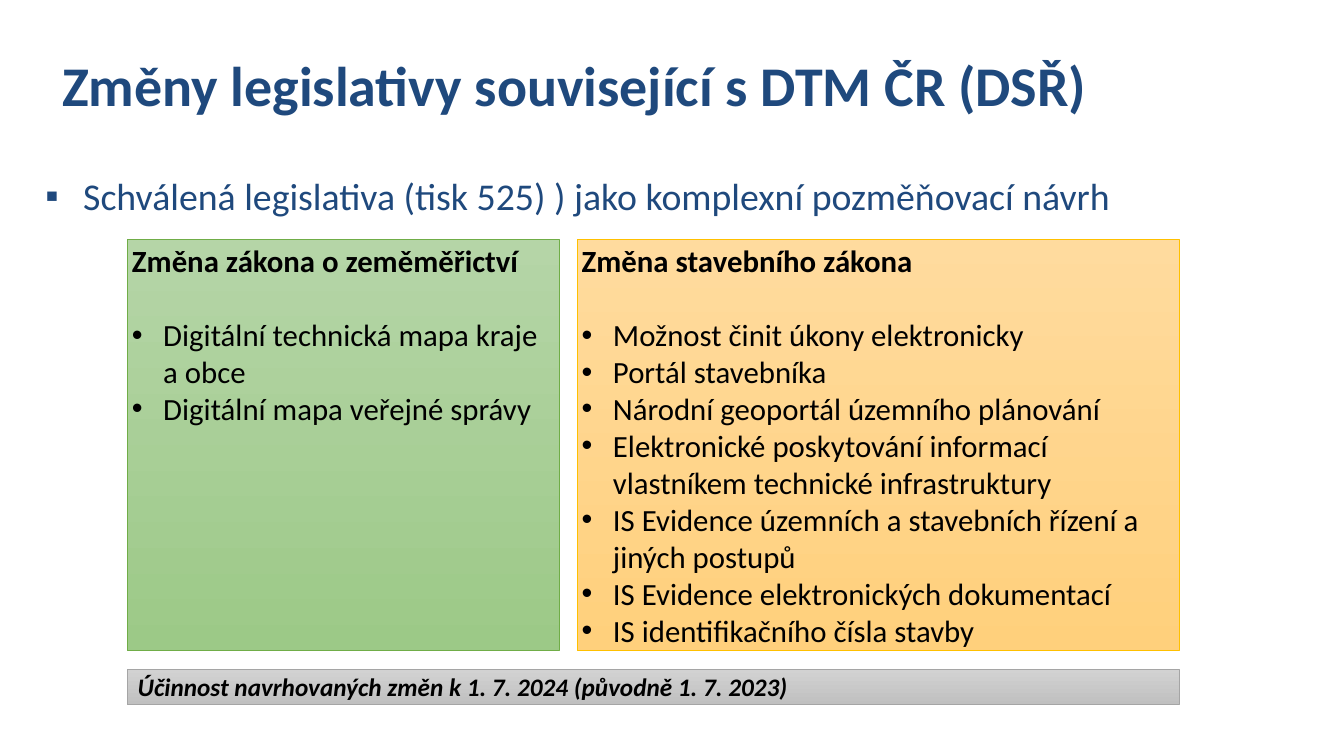
"""Build a slide on legislative changes related to the digital technical map."""
from lxml import etree
from pptx import Presentation
from pptx.dml.color import RGBColor
from pptx.enum.shapes import MSO_SHAPE
from pptx.enum.text import MSO_ANCHOR, MSO_AUTO_SIZE, PP_ALIGN
from pptx.oxml.ns import qn
from pptx.util import Inches, Pt

RECTANGLE = MSO_SHAPE.RECTANGLE
TOP, MIDDLE, BOTTOM = MSO_ANCHOR.TOP, MSO_ANCHOR.MIDDLE, MSO_ANCHOR.BOTTOM
LEFT = PP_ALIGN.LEFT
NO_AUTOFIT = MSO_AUTO_SIZE.NONE
NAVY, BLACK = "1F497D", "000000"


def color(value):
    return RGBColor.from_string(value)


def write(paragraph, text, size, text_color, bold=False, bullet=None, indent=0):
    paragraph.text = text
    paragraph.alignment = LEFT
    paragraph.space_before = Pt(0)
    if bullet:
        properties = paragraph._p.get_or_add_pPr()
        properties.set("marL", str(Inches(indent)))
        properties.set("indent", str(-Inches(indent)))
        etree.SubElement(properties, qn("a:buFont"), typeface="Arial")
        etree.SubElement(properties, qn("a:buChar"), char=bullet)
    paragraph.font.name = "Calibri"
    paragraph.font.size = Pt(size)
    paragraph.font.bold = bold
    paragraph.font.color.rgb = color(text_color)


presentation = Presentation()
presentation.slide_width = Inches(26.66)
presentation.slide_height = Inches(15)
slide = presentation.slides.add_slide(presentation.slide_layouts[1])
title, body = slide.placeholders

placeholders = [
    (title, (1.13, 0.87, 21.55, 1.53), BOTTOM,
     "Změny legislativy související s DTM ČR (DSŘ)", 80, True, None),
    (body, (0.8, 3.47, 24.61, 10.86), TOP,
     "Schválená legislativa (tisk 525) ) jako komplexní pozměňovací návrh", 54, False, "▪"),
]
for shape, box, anchor, text, size, bold, bullet in placeholders:
    shape.left, shape.top, shape.width, shape.height = map(Inches, box)
    frame = shape.text_frame
    frame.auto_size = NO_AUTOFIT
    frame.vertical_anchor = anchor
    write(frame.paragraphs[0], text, size, NAVY, bold, bullet, 0.75)
    frame.paragraphs[0].line_spacing = 0.9

panels = [
    ((2.52, 4.75, 8.57, 8.16), ("B5D5A7", "9CC987"), "70AD47", TOP, 44,
     "Změna zákona o zeměměřictví",
     ["Digitální technická mapa kraje a obce", "Digitální mapa veřejné správy"]),
    ((11.44, 4.75, 11.95, 8.16), ("FFDB9E", "FFD07C"), "FFC000", TOP, 44,
     "Změna stavebního zákona",
     ["Možnost činit úkony elektronicky",
      "Portál stavebníka",
      "Národní geoportál územního plánování",
      "Elektronické poskytování informací vlastníkem technické infrastruktury",
      "IS Evidence územních a stavebních řízení a jiných postupů",
      "IS Evidence elektronických dokumentací",
      "IS identifikačního čísla stavby"]),
    ((2.52, 13.27, 20.87, 0.71), ("D2D2D2", "C0C0C0"), "A5A5A5", MIDDLE, 36,
     "Účinnost navrhovaných změn k 1. 7. 2024 (původně 1. 7. 2023)", []),
]
for box, gradient, line_color, anchor, size, heading, items in panels:
    panel = slide.shapes.add_shape(RECTANGLE, *map(Inches, box))
    panel.shadow.inherit = False
    panel.fill.gradient()
    panel.fill.gradient_angle = 270
    for stop, stop_color in zip(panel.fill.gradient_stops, gradient):
        stop.color.rgb = color(stop_color)
    panel.line.color.rgb = color(line_color)
    panel.line.width = Pt(0.5)
    frame = panel.text_frame
    frame.word_wrap = True
    frame.vertical_anchor = anchor
    heading_paragraph = frame.paragraphs[0]
    write(heading_paragraph, heading, size, BLACK, bold=True)
    if items:
        heading_paragraph.space_after = Pt(53)
    else:
        frame.margin_left = Inches(0.21)
        heading_paragraph.font.italic = True
    for item in items:
        write(frame.add_paragraph(), item, size, BLACK, bullet="•", indent=0.62)

presentation.save("out.pptx")
